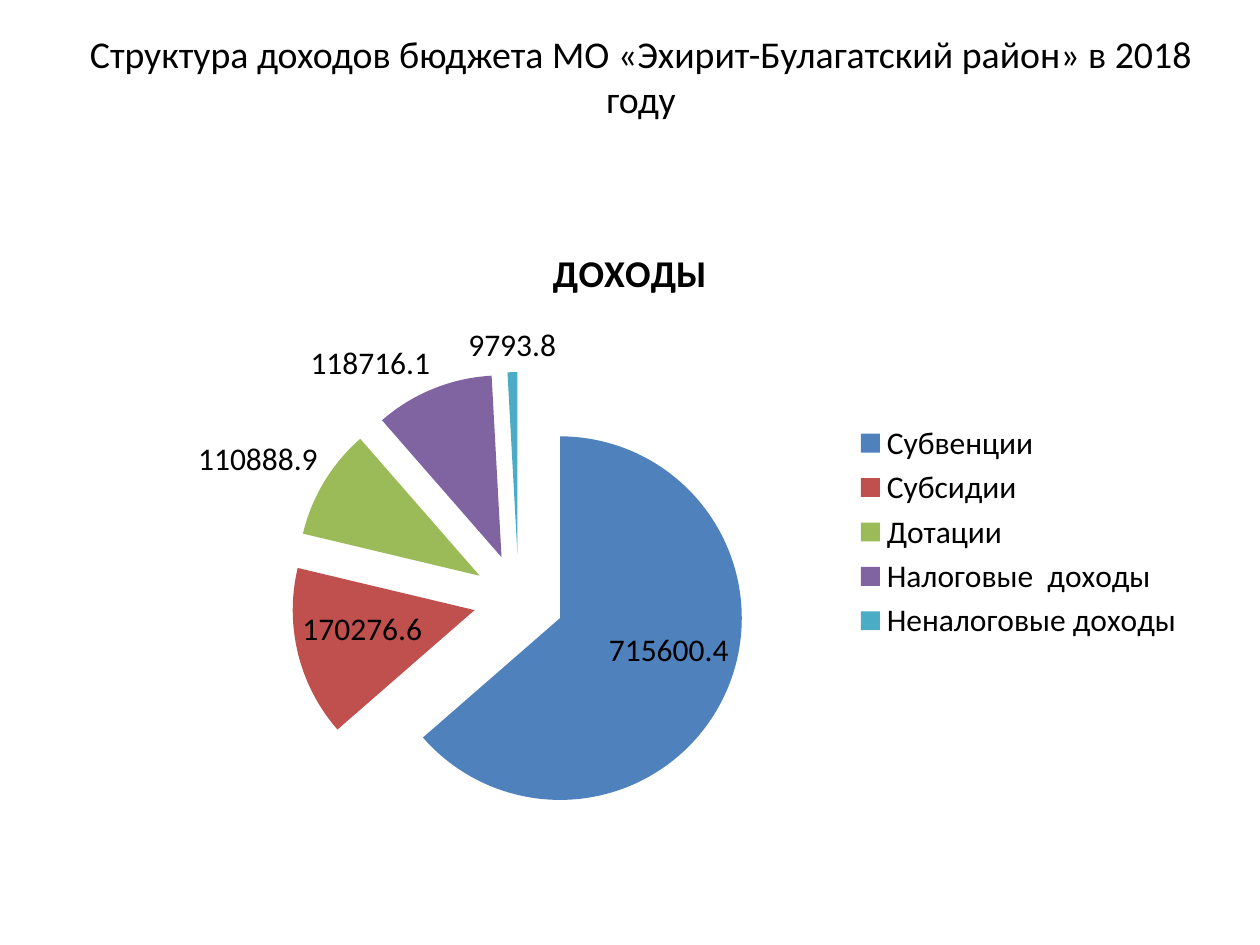
from lxml import etree
from pptx import Presentation
from pptx.chart.data import CategoryChartData
from pptx.dml.color import RGBColor
from pptx.enum.chart import XL_CHART_TYPE, XL_LABEL_POSITION, XL_LEGEND_POSITION
from pptx.enum.text import MSO_ANCHOR, PP_ALIGN
from pptx.oxml.ns import qn
from pptx.util import Emu, Pt

PX = 914400 / 126
INCOME = [
    ("Субвенции", 715600.4, "4F81BD"),
    ("Субсидии", 170276.6, "C0504D"),
    ("Дотации", 110888.9, "9BBB59"),
    ("Налоговые  доходы", 118716.1, "8064A2"),
    ("Неналоговые доходы", 9793.8, "4BACC6"),
]


def px(length):
    return Emu(round(length * PX))


def color(hex_value):
    return RGBColor.from_string(hex_value)


class SlideBuilder:
    font_name = "Calibri"
    text_color = "000000"
    heading_size = 21.6
    body_size = 18

    def __init__(self, slide):
        self.slide = slide

    def style(self, font, size, bold=False):
        font.name = self.font_name
        font.size = Pt(size)
        font.bold = bold
        font.color.rgb = color(self.text_color)

    def heading(self, text, left, top, width, height):
        frame = self.slide.shapes.add_textbox(*map(px, (left, top, width, height))).text_frame
        frame.word_wrap = True
        frame.vertical_anchor = MSO_ANCHOR.MIDDLE
        frame.text = text
        paragraph = frame.paragraphs[0]
        paragraph.alignment = PP_ALIGN.CENTER
        self.style(paragraph.runs[0].font, self.heading_size)

    def pie(self, title, slices, explosion, left, top, width, height):
        names, values, fills = zip(*slices)
        data = CategoryChartData()
        data.categories = names
        data.add_series(title, values)
        chart = self.slide.shapes.add_chart(
            XL_CHART_TYPE.PIE, *map(px, (left, top, width, height)), data
        ).chart
        self.style(chart.font, self.body_size)

        # Chart title and legend
        chart.has_title = True
        chart.chart_title.include_in_layout = False
        caption = chart.chart_title.text_frame
        caption.text = title
        self.style(caption.paragraphs[0].runs[0].font, self.heading_size, bold=True)
        chart.has_legend = True
        chart.legend.position = XL_LEGEND_POSITION.RIGHT
        chart.legend.include_in_layout = False
        self.style(chart.legend.font, self.body_size)

        # Separated slices
        plot = chart.plots[0]
        plot.vary_by_categories = True
        series = plot.series[0]
        offset = etree.Element(qn("c:explosion"), val=str(explosion))
        series._element.find(qn("c:tx")).addnext(offset)
        for index, fill in enumerate(fills):
            slice_fill = series.points[index].format.fill
            slice_fill.solid()
            slice_fill.fore_color.rgb = color(fill)

        # Value labels
        labels = series.data_labels
        labels.show_value = True
        labels.position = XL_LABEL_POSITION.BEST_FIT
        self.style(labels.font, self.body_size)


def main():
    presentation = Presentation()
    presentation.slide_width = px(1260)
    presentation.slide_height = px(945)
    builder = SlideBuilder(presentation.slides.add_slide(presentation.slide_layouts[6]))

    # Heading
    builder.heading(
        "Структура доходов бюджета МО «Эхирит-Булагатский район» в 2018 году",
        74, 26, 1134, 100,
    )

    # Income structure
    builder.pie("ДОХОДЫ", INCOME, 25, 63, 220, 1134, 624)

    presentation.save("out.pptx")


if __name__ == "__main__":
    main()
